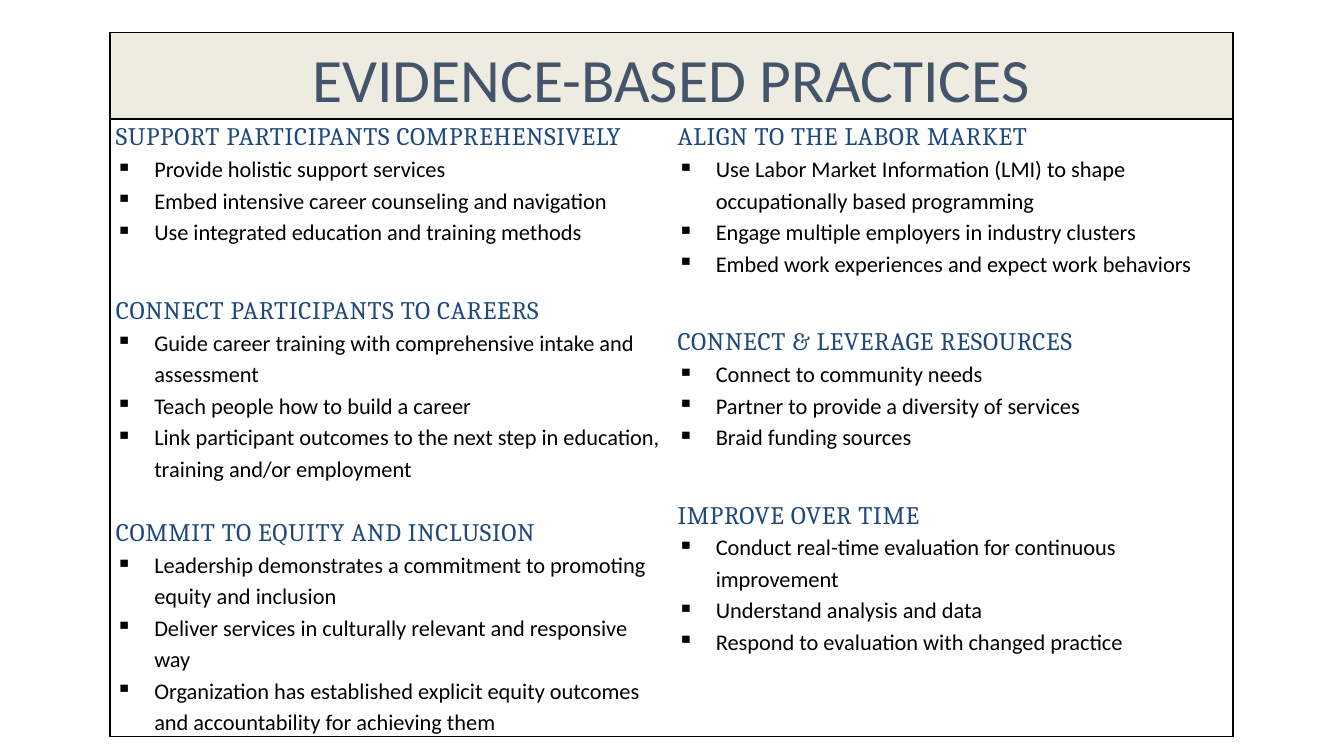
from dataclasses import dataclass

from lxml import etree
from pptx import Presentation
from pptx.dml.color import RGBColor
from pptx.enum.text import PP_ALIGN
from pptx.oxml.ns import qn
from pptx.table import _Cell
from pptx.util import Inches, Pt

CENTER = PP_ALIGN.CENTER
LEFT = PP_ALIGN.LEFT


@dataclass(frozen=True)
class Theme:
    body_font: str = "Calibri"
    heading_font: str = "Cambria"
    title_color: str = "44546A"
    heading_color: str = "1F497D"
    text_color: str = "000000"
    border_color: str = "000000"
    title_fill: str = "EEECE1"
    title_size: float = 44
    heading_size: float = 18
    body_size: float = 16
    line_spacing: float = 1.15
    heading_tracking: float = 0.5
    border_width: float = 1


@dataclass(frozen=True)
class Section:
    heading: str
    practices: tuple[str, ...]
    space_before: float = 0


THEME = Theme()
SECTION_GAP = 32.5
SMALL_SECTION_GAP = 22.5
BULLET_INDENT = Inches(0.38)
COLUMN_WIDTH = 5.57
TITLE_HEIGHT = 0.86
BODY_HEIGHT = 6.06

TITLE = "EVIDENCE-BASED PRACTICES"
COLUMNS = (
    (
        Section("SUPPORT PARTICIPANTS COMPREHENSIVELY", (
            "Provide holistic support services",
            "Embed intensive career counseling and navigation",
            "Use integrated education and training methods",
        )),
        Section("CONNECT PARTICIPANTS TO CAREERS", (
            "Guide career training with comprehensive intake and assessment",
            "Teach people how to build a career",
            "Link participant outcomes to the next step in education, training and/or employment",
        ), SECTION_GAP),
        Section("COMMIT TO EQUITY AND INCLUSION", (
            "Leadership demonstrates a commitment to promoting equity and inclusion",
            "Deliver services in culturally relevant and responsive way",
            "Organization has established explicit equity outcomes and accountability for achieving them",
        ), SMALL_SECTION_GAP),
    ),
    (
        Section("ALIGN TO THE LABOR MARKET", (
            "Use Labor Market Information (LMI) to shape occupationally based programming",
            "Engage multiple employers in industry clusters",
            "Embed work experiences and expect work behaviors",
        )),
        Section("CONNECT & LEVERAGE RESOURCES", (
            "Connect to community needs",
            "Partner to provide a diversity of services",
            "Braid funding sources",
        ), SECTION_GAP),
        Section("IMPROVE OVER TIME", (
            "Conduct real-time evaluation for continuous improvement",
            "Understand analysis and data",
            "Respond to evaluation with changed practice",
        ), SECTION_GAP),
    ),
)


def add_text(cell: _Cell, text: str, *, size: float, color: str, font: str = THEME.body_font,
             align: PP_ALIGN = LEFT, space_before: float = 0, tracking: float = 0,
             bullet: str = "") -> None:
    """Fill the cell's first paragraph, or append one when it already has text."""
    frame = cell.text_frame
    paragraph = frame.add_paragraph() if frame.text else frame.paragraphs[0]
    paragraph.alignment = align
    paragraph.line_spacing = THEME.line_spacing
    paragraph.space_before = Pt(space_before)
    run = paragraph.add_run()
    run.text = text
    run.font.name = font
    run.font.size = Pt(size)
    run.font.bold = False
    run.font.color.rgb = RGBColor.from_string(color)
    if tracking:
        run._r.get_or_add_rPr().set("spc", str(round(tracking * 100)))
    if bullet:
        properties = paragraph._p.get_or_add_pPr()
        properties.set("marL", str(BULLET_INDENT))
        properties.set("indent", str(-BULLET_INDENT))
        etree.SubElement(properties, qn("a:buChar")).set("char", bullet)


def format_cell(cell: _Cell, sides: str, fill: str = "") -> None:
    """Set margins, fill, and a border on each side named in L, R, T, B."""
    cell.margin_left = cell.margin_right = Inches(0.06)
    cell.margin_top = cell.margin_bottom = 0
    properties = cell._tc.get_or_add_tcPr()
    for side in "LRTB":
        line = etree.SubElement(properties, qn(f"a:ln{side}"))
        if side in sides:
            line.set("w", str(Pt(THEME.border_width)))
            solid = etree.SubElement(line, qn("a:solidFill"))
            etree.SubElement(solid, qn("a:srgbClr")).set("val", THEME.border_color)
        else:
            etree.SubElement(line, qn("a:noFill"))
    if fill:
        cell.fill.solid()
        cell.fill.fore_color.rgb = RGBColor.from_string(fill)
    else:
        cell.fill.background()


def add_section(cell: _Cell, section: Section) -> None:
    add_text(cell, section.heading, size=THEME.heading_size, color=THEME.heading_color,
             font=THEME.heading_font, space_before=section.space_before,
             tracking=THEME.heading_tracking)
    for practice in section.practices:
        add_text(cell, practice, size=THEME.body_size, color=THEME.text_color, bullet="▪")


def main() -> None:
    presentation = Presentation()
    presentation.slide_width = Inches(13.33)
    presentation.slide_height = Inches(7.5)
    slide = presentation.slides.add_slide(presentation.slide_layouts[6])

    table = slide.shapes.add_table(
        2, len(COLUMNS), Inches(1.09), Inches(0.32),
        Inches(COLUMN_WIDTH * len(COLUMNS)), Inches(TITLE_HEIGHT + BODY_HEIGHT)).table
    table.first_row = False
    table.horz_banding = False
    for column in table.columns:
        column.width = Inches(COLUMN_WIDTH)
    for row, height in zip(table.rows, (TITLE_HEIGHT, BODY_HEIGHT)):
        row.height = Inches(height)

    title_cell = table.cell(0, 0)
    title_cell.merge(table.cell(0, 1))
    for cell in table.rows[0].cells:
        format_cell(cell, "LRTB", THEME.title_fill)
    add_text(title_cell, TITLE, size=THEME.title_size, color=THEME.title_color, align=CENTER)

    for cell, sections, sides in zip(table.rows[1].cells, COLUMNS, ("LTB", "RTB")):
        format_cell(cell, sides)
        for section in sections:
            add_section(cell, section)

    presentation.save("out.pptx")


if __name__ == "__main__":
    main()
